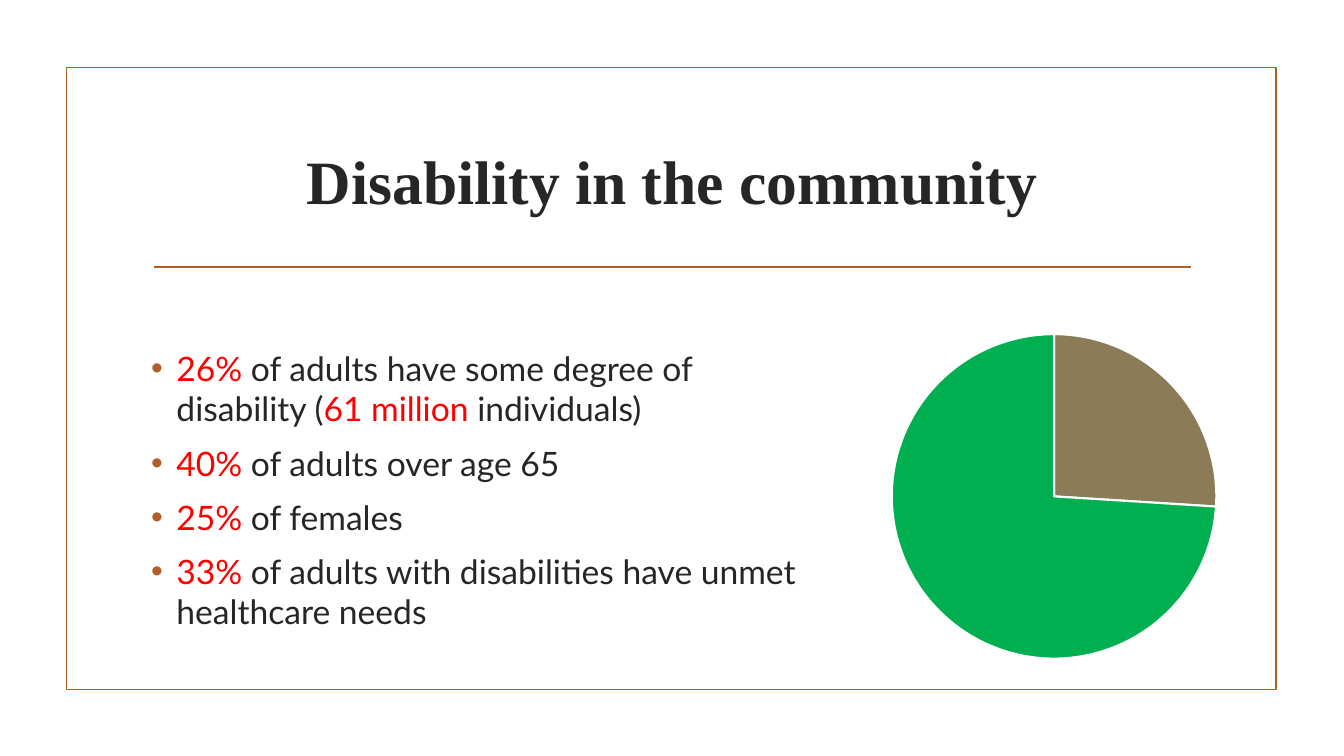
from lxml import etree
from pptx import Presentation
from pptx.chart.data import CategoryChartData
from pptx.dml.color import RGBColor
from pptx.enum.chart import XL_CHART_TYPE
from pptx.enum.shapes import MSO_CONNECTOR, MSO_SHAPE
from pptx.enum.text import MSO_ANCHOR, MSO_AUTO_SIZE, PP_ALIGN
from pptx.oxml import parse_xml
from pptx.oxml.ns import nsdecls, qn
from pptx.util import Inches, Pt

PIE, RECT, LINE = XL_CHART_TYPE.PIE, MSO_SHAPE.RECTANGLE, MSO_CONNECTOR.STRAIGHT
TOP, MIDDLE, CENTER, LEFT = MSO_ANCHOR.TOP, MSO_ANCHOR.MIDDLE, PP_ALIGN.CENTER, PP_ALIGN.LEFT
RUST = RGBColor(0xB1, 0x5E, 0x28)
INK = RGBColor(0x26, 0x26, 0x26)
RED = RGBColor(0xFF, 0x00, 0x00)
TAN = RGBColor(0x8B, 0x7B, 0x56)
GREEN = RGBColor(0x00, 0xB0, 0x50)
WHITE = RGBColor(0xFF, 0xFF, 0xFF)
BLACK = RGBColor(0x00, 0x00, 0x00)

# Content: each bullet alternates red figures and dark text
TITLE = "Disability in the community"
FACTS = [
    ("26%", " of adults have some degree of disability (", "61 million ", "individuals)"),
    ("40%", " of adults over age 65"),
    ("25%", " of females"),
    ("33%", " of adults with disabilities have unmet healthcare needs"),
]
SHARES = [("1", 26, TAN), ("2", 74, GREEN)]
HEAD = {"name": "Times New Roman", "size": Pt(44), "bold": True}
BODY = {"name": "Lato", "size": Pt(24)}
SMALL = {"name": "Times New Roman", "size": Pt(10)}


def style(font, color, form):
    for key, val in form.items():
        setattr(font, key, val)
    font.color.rgb = color


def place(shape, box, anchor):
    shape.left, shape.top, shape.width, shape.height = map(Inches, box)
    frame = shape.text_frame
    frame.word_wrap = True
    frame.auto_size = MSO_AUTO_SIZE.NONE
    frame.vertical_anchor = anchor
    return frame


def bullet(para):
    props = para._p.get_or_add_pPr()
    props.set("marL", str(Inches(0.25)))
    props.set("indent", str(-Inches(0.25)))
    tint = etree.SubElement(props, qn("a:buClr"))
    etree.SubElement(tint, qn("a:srgbClr"), val=str(RUST))
    etree.SubElement(props, qn("a:buFont"), typeface="Arial")
    etree.SubElement(props, qn("a:buChar"), char="•")


def main():
    prs = Presentation()
    prs.slide_width, prs.slide_height = Inches(13.33), Inches(7.5)
    slide = prs.slides.add_slide(prs.slide_layouts[1])
    shapes = slide.shapes

    # Frame and rule
    frame = shapes.add_shape(RECT, *map(Inches, (0.66, 0.67, 12, 6.17)))
    frame.shadow.inherit = False
    frame.fill.background()
    rule = shapes.add_connector(LINE, *map(Inches, (1.53, 2.65, 11.81, 2.65)))
    etree.SubElement(rule._element.spPr, qn("a:effectLst"))
    for part in (frame, rule):
        part.line.color.rgb = RUST
        part.line.width = Pt(1.25)

    # Title
    para = place(shapes.title, (1.42, 1.07, 10.5, 1.43), MIDDLE).paragraphs[0]
    para.alignment = CENTER
    run = para.add_run()
    run.text = TITLE
    style(run.font, INK, HEAD)

    # Bullets
    text = place(slide.placeholders[1], (1.4, 3.4, 6.66, 3.04), TOP)
    for row, fact in enumerate(FACTS):
        para = text.add_paragraph() if row else text.paragraphs[0]
        bullet(para)
        para.alignment = LEFT
        para.space_before = Pt(10 if row else 0)
        for col, words in enumerate(fact):
            run = para.add_run()
            run.text = words
            style(run.font, INK if col % 2 else RED, BODY)

    # Pie chart
    data = CategoryChartData()
    data.categories = [name for name, _, _ in SHARES]
    data.add_series("Series 1", [share for _, share, _ in SHARES])
    chart = shapes.add_chart(PIE, *map(Inches, (7.58, 3.17, 5.75, 3.51)), data).chart
    chart.has_title = chart.has_legend = False
    style(chart.font, BLACK, SMALL)
    plot = chart.plots[0]
    plot.vary_by_categories = True
    for idx, (_, _, color) in enumerate(SHARES):
        look = plot.series[0].points[idx].format
        look.fill.solid()
        look.fill.fore_color.rgb = color
        look.line.color.rgb = WHITE
        look.line.width = Pt(1.5)

    # Pie size as a share of the chart area
    area = chart._chartSpace.find(".//" + qn("c:plotArea"))
    for old in area.findall(qn("c:layout")):
        area.remove(old)
    spots = {"x": 0.22, "y": 0.04, "w": 0.56, "h": 0.92}
    tags = "".join(f'<c:{key} val="{val}"/>' for key, val in spots.items())
    area.insert(0, parse_xml(
        f'<c:layout {nsdecls("c")}><c:manualLayout><c:layoutTarget val="inner"/>'
        f'<c:xMode val="edge"/><c:yMode val="edge"/>{tags}</c:manualLayout></c:layout>'))

    prs.save("out.pptx")


if __name__ == "__main__":
    main()
